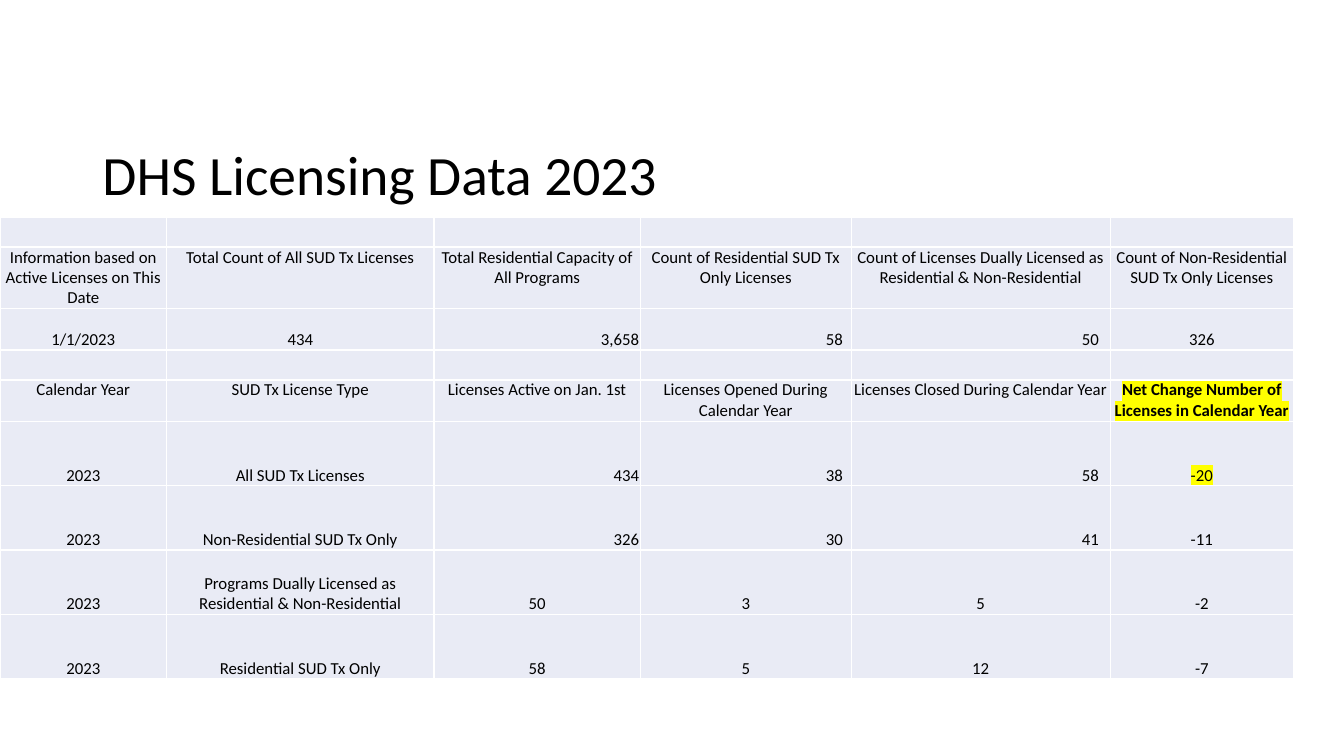
from lxml import etree
from pptx import Presentation
from pptx.dml.color import RGBColor
from pptx.enum import text
from pptx.oxml import ns
from pptx.util import Pt

COLORS = {"text": "000000", "cell": "E9EBF5", "highlight": "FFFF00"}
FONT = "Calibri"

# Content
HEADING = "DHS Licensing Data 2023"
BLANK = [""] * 6
LICENSING = [
    BLANK,
    ["Information based on Active Licenses on This Date", "Total Count of All SUD Tx Licenses",
     "Total Residential Capacity of All Programs", "Count of Residential SUD Tx Only Licenses",
     "Count of Licenses Dually Licensed as Residential & Non-Residential",
     "Count of Non-Residential SUD Tx Only Licenses"],
    ["1/1/2023", "434", "3,658", "58", "50", "326"],
    BLANK,
    ["Calendar Year", "SUD Tx License Type", "Licenses Active on Jan. 1st",
     "Licenses Opened During Calendar Year", "Licenses Closed During Calendar Year",
     "Net Change Number of Licenses in Calendar Year"],
    ["2023", "All SUD Tx Licenses", "434", "38", "58", "-20"],
    ["2023", "Non-Residential SUD Tx Only", "326", "30", "41", "-11"],
    ["2023", "Programs Dually Licensed as Residential & Non-Residential", "50", "3", "5", "-2"],
    ["2023", "Residential SUD Tx Only", "58", "5", "12", "-7"],
]
COLUMN_WIDTHS = [119, 191, 147.5, 150.5, 185, 131]
ROW_HEIGHTS = [21.5, 44, 29.5, 21.5, 29.5, 46, 46, 46, 46]
LABEL_ROWS = {1, 4}
RIGHT_ALIGNED_ROWS = {2, 5, 6}
RIGHT_INSETS = {2: 1, 3: 6, 4: 8}
HIGHLIGHTED = {(4, 5), (5, 5)}
BOLD = {(4, 5)}


def style(paragraph, size, bold=False):
    font = paragraph.font
    font.name, font.size, font.bold = FONT, Pt(size), bold
    font.color.rgb = RGBColor.from_string(COLORS["text"])


def highlight(run):
    mark = etree.SubElement(run.font._element, ns.qn("a:highlight"))
    etree.SubElement(mark, ns.qn("a:srgbClr"), val=COLORS["highlight"])


def fill_cell(cell, row, column, words):
    cell.fill.solid()
    cell.fill.fore_color.rgb = RGBColor.from_string(COLORS["cell"])
    cell.margin_left = cell.margin_right = cell.margin_top = cell.margin_bottom = 0
    cell.vertical_anchor = text.MSO_ANCHOR.TOP if row in LABEL_ROWS else text.MSO_ANCHOR.BOTTOM
    paragraph = cell.text_frame.paragraphs[0]
    paragraph.alignment = text.PP_ALIGN.CENTER
    if row in RIGHT_ALIGNED_ROWS and column in RIGHT_INSETS:
        paragraph.alignment = text.PP_ALIGN.RIGHT
        cell.margin_right = Pt(RIGHT_INSETS[column])
    style(paragraph, 12, (row, column) in BOLD)
    if words:
        run = paragraph.add_run()
        run.text = words
        if (row, column) in HIGHLIGHTED:
            highlight(run)
    else:
        etree.SubElement(paragraph._p, ns.qn("a:endParaRPr"), sz="1200")


deck = Presentation()
deck.slide_width, deck.slide_height = Pt(960), Pt(540)
slide = deck.slides.add_slide(deck.slide_layouts[5])

# Title
heading = slide.shapes.title
heading.left, heading.top, heading.width, heading.height = Pt(66), Pt(100), Pt(828), Pt(54)
heading.text_frame.text = HEADING
heading.text_frame.vertical_anchor = text.MSO_ANCHOR.MIDDLE
heading_line = heading.text_frame.paragraphs[0]
heading_line.alignment = text.PP_ALIGN.LEFT
heading_line.line_spacing = 0.9
style(heading_line, 39.6)

# Licensing table
licensing = slide.shapes.add_table(
    len(LICENSING), len(COLUMN_WIDTHS), Pt(0), Pt(155),
    Pt(sum(COLUMN_WIDTHS)), Pt(sum(ROW_HEIGHTS))).table
licensing.first_row = licensing.horz_banding = False
for column, width in zip(licensing.columns, COLUMN_WIDTHS):
    column.width = Pt(width)
for row, height in zip(licensing.rows, ROW_HEIGHTS):
    row.height = Pt(height)
for r, entries in enumerate(LICENSING):
    for c, words in enumerate(entries):
        fill_cell(licensing.cell(r, c), r, c, words)

deck.save("out.pptx")
